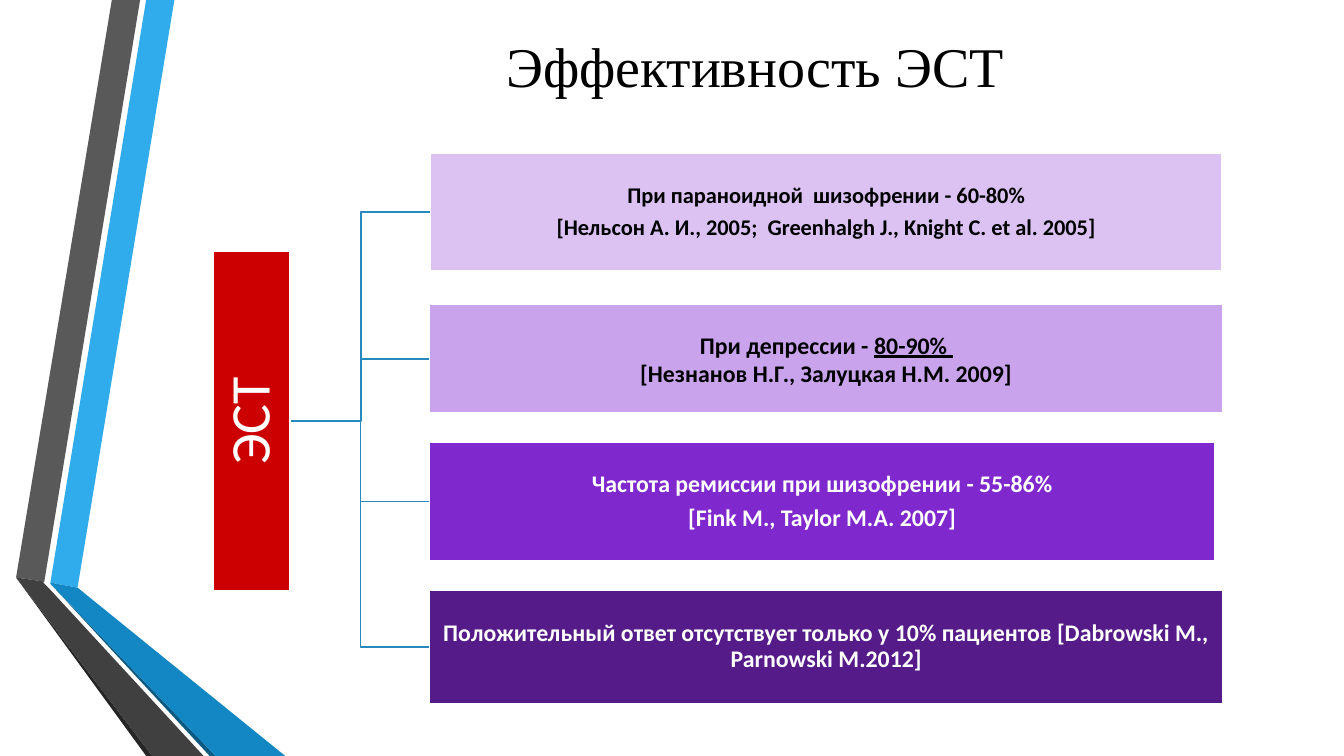
from dataclasses import dataclass

from lxml import etree
from pptx import Presentation
from pptx.dml.color import RGBColor
from pptx.enum.shapes import MSO_CONNECTOR, MSO_SHAPE
from pptx.enum.text import MSO_ANCHOR, PP_ALIGN
from pptx.oxml.ns import qn
from pptx.util import Inches, Pt

ELBOW = MSO_CONNECTOR.ELBOW
RECT = MSO_SHAPE.RECTANGLE
MIDDLE = MSO_ANCHOR.MIDDLE
CENTER = PP_ALIGN.CENTER


@dataclass(frozen=True)
class Theme:
    """Colours, fonts and type sizes of the slide."""
    black: str = "000000"
    white: str = "FFFFFF"
    red: str = "CC0000"
    link: str = "268ABD"
    lilac: str = "DBC2F3"
    lavender: str = "CAA3ED"
    violet: str = "7E28CD"
    purple: str = "541B89"
    title_font: str = "Times New Roman"
    body_font: str = "Calibri"
    title_size: int = 40
    body_size: int = 17
    small_size: int = 16
    line_width: float = 1.25


THEME = Theme()

RIBBONS = [
    ("30ACEC", [(0.5, 5.78), (0.77, 5.83), (1.73, 0), (1.45, 0)]),
    ("595959", [(1.39, 0), (1.11, 0), (0.16, 5.73), (0.44, 5.77)]),
    ("262626", [(0.16, 5.73), (1.45, 7.5), (1.51, 7.5)]),
    ("0C5A82", [(0.5, 5.79), (2.08, 7.5), (2.14, 7.5)]),
    ("1287C3", [(0.5, 5.79), (2.14, 7.5), (2.83, 7.5), (0.77, 5.83), (0.5, 5.78)]),
    ("404040", [(2.02, 7.5), (0.48, 5.83), (0.43, 5.78), (0.44, 5.77),
                (0.16, 5.73), (1.51, 7.5)]),
]

ROOT_X, ROOT_Y = 2.89, 4.18

BRANCHES = [
    ((4.27, 1.52, 7.85, 1.17), THEME.lilac, THEME.black, THEME.small_size, True,
     [[("При параноидной  шизофрении - 60-80%", False)],
      [("[Нельсон А. И., 2005;  Greenhalgh J., Knight C. et al. 2005]", False)]]),
    ((4.26, 3.02, 7.87, 1.08), THEME.lavender, THEME.black, THEME.body_size, False,
     [[("При депрессии - ", False), ("80-90% ", True)],
      [("[Незнанов Н.Г., Залуцкая Н.М. 2009]", False)]]),
    ((4.26, 4.39, 7.79, 1.17), THEME.violet, THEME.white, THEME.body_size, True,
     [[("Частота ремиссии при шизофрении - 55-86%", False)],
      [("[Fink M., Taylor M.A. 2007]", False)]]),
    ((4.26, 5.85, 7.87, 1.13), THEME.purple, THEME.white, THEME.body_size, True,
     [[("Положительный ответ отсутствует только у 10% пациентов "
        "[Dabrowski M., Parnowski M.2012]", False)]]),
]


def rgb(value):
    """Turn a hex string into a colour."""
    return RGBColor.from_string(value)


def add_ribbon(s, color, points):
    """Draw one filled polygon of the side ribbon."""
    start, *rest = [(Inches(x), Inches(y)) for x, y in points]
    builder = s.shapes.build_freeform(*start)
    builder.add_line_segments(rest, close=True)
    sp = builder.convert_to_shape()
    sp.shadow.inherit = False
    sp.fill.solid()
    sp.fill.fore_color.rgb = rgb(color)
    sp.line.fill.background()


def add_link(s, x, y):
    """Draw an elbow line from the root box to a branch."""
    cx = s.shapes.add_connector(ELBOW, Inches(ROOT_X), Inches(ROOT_Y), Inches(x), Inches(y))
    cx.line.color.rgb = rgb(THEME.link)
    cx.line.width = Pt(THEME.line_width)
    etree.SubElement(cx.line._get_or_add_ln().getparent(), qn("a:effectLst"))


def set_text(sp, paragraphs, font, size, color, bold=False, tight=False, inset=0.05):
    """Fill a shape with centred paragraphs of (text, underlined) runs."""
    tf = sp.text_frame
    tf.word_wrap = True
    tf.vertical_anchor = MIDDLE
    tf.margin_left = tf.margin_right = tf.margin_top = tf.margin_bottom = Inches(inset)
    for i, runs in enumerate(paragraphs):
        p = tf.paragraphs[0] if i == 0 else tf.add_paragraph()
        p.alignment = CENTER
        if tight:
            p.line_spacing = 0.9
            p.space_after = Pt(round(size * 0.35, 1))
        for text, underlined in runs:
            r = p.add_run()
            r.text = text
            r.font.name = font
            r.font.size = Pt(size)
            r.font.bold = bold
            r.font.underline = underlined
            r.font.color.rgb = rgb(color)


def add_box(s, place, fill):
    """Draw a filled rectangle with a white outline."""
    sp = s.shapes.add_shape(RECT, *map(Inches, place))
    sp.shadow.inherit = False
    sp.fill.solid()
    sp.fill.fore_color.rgb = rgb(fill)
    sp.line.color.rgb = rgb(THEME.white)
    sp.line.width = Pt(THEME.line_width)
    return sp


def add_title(s, text):
    """Place the slide heading."""
    tb = s.shapes.add_textbox(Inches(2.01), Inches(0.09), Inches(10.96), Inches(1.11))
    set_text(tb, [[(text, False)]], THEME.title_font, THEME.title_size, THEME.black)


def add_root(s, text):
    """Draw the upright box that the branches start from."""
    sp = add_box(s, (0.81, 3.79, 3.37, 0.77), THEME.red)
    sp.rotation = 270
    set_text(sp, [[(text, False)]], THEME.body_font, THEME.title_size, THEME.white,
             tight=True, inset=0.03)


def add_branch(s, place, fill, color, size, tight, paragraphs):
    """Draw one branch box with its text."""
    sp = add_box(s, place, fill)
    set_text(sp, paragraphs, THEME.body_font, size, color, bold=True, tight=tight, inset=0.01)


def main():
    """Build the slide and save it."""
    prs = Presentation()
    prs.slide_width, prs.slide_height = Inches(13.33), Inches(7.5)
    s = prs.slides.add_slide(prs.slide_layouts[6])
    for color, points in RIBBONS:
        add_ribbon(s, color, points)
    add_title(s, "Эффективность ЭСТ")
    for (x, y, _, h), *_ in BRANCHES:
        add_link(s, x, y + h / 2)
    add_root(s, "ЭСТ")
    for branch in BRANCHES:
        add_branch(s, *branch)
    prs.save("out.pptx")


if __name__ == "__main__":
    main()
